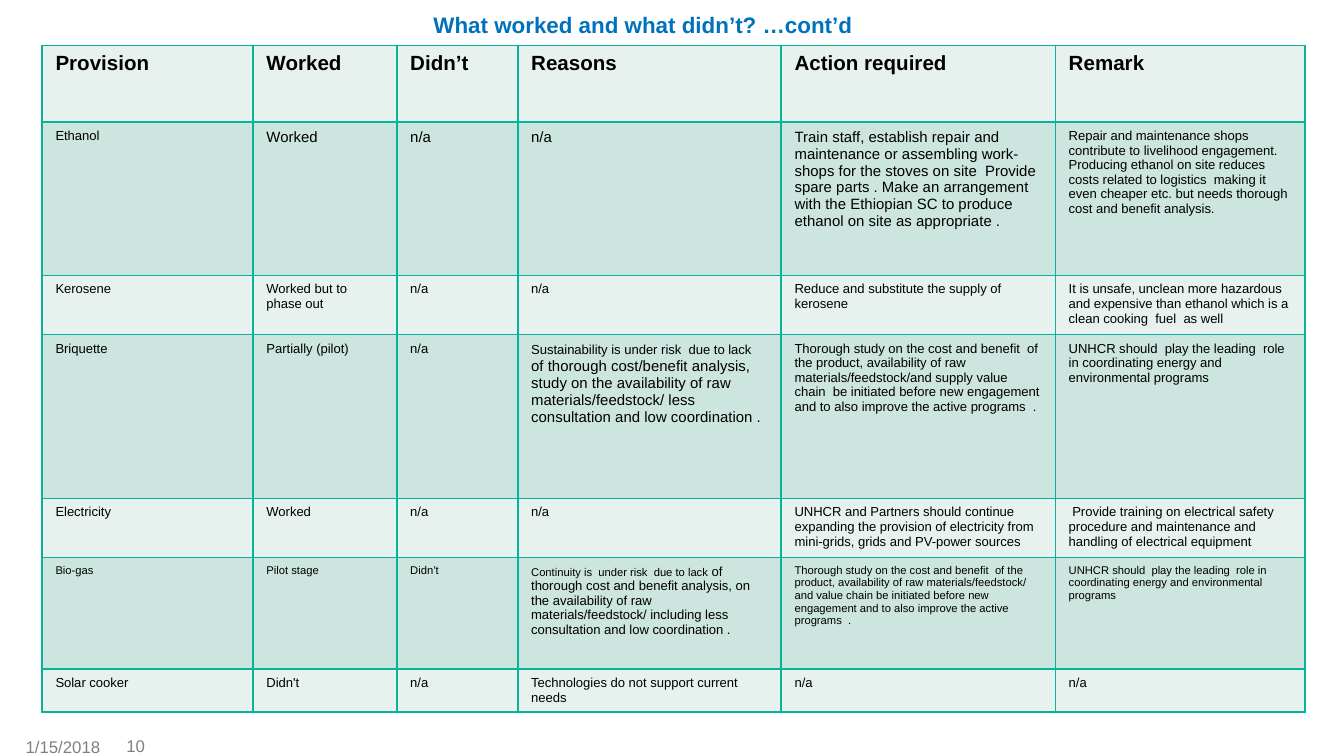
"""Build the slide on which cooking energy provisions worked and which did not."""
from dataclasses import dataclass
from typing import NamedTuple

from lxml.etree import SubElement
from pptx import Presentation
from pptx.dml.color import RGBColor
from pptx.enum.text import MSO_ANCHOR, MSO_AUTO_SIZE, PP_ALIGN
from pptx.oxml.ns import qn
from pptx.util import Inches, Pt


@dataclass(frozen=True)
class Theme:
    font: str = "Arial"
    title: str = "0072BC"
    ink: str = "000000"
    footer: str = "808080"
    border: str = "08B499"
    light: str = "E7F2EF"
    dark: str = "CCE5DE"
    title_size: int = 12
    header_size: int = 11
    footer_size: int = 9
    large: int = 8
    body: int = 7
    small: int = 6


class Area(NamedTuple):
    left: float
    top: float
    width: float
    height: float


class Run(NamedTuple):
    text: str
    size: int


class Footer(NamedTuple):
    text: str
    area: Area


THEME = Theme()
SLIDE_WIDTH = Inches(10)
SLIDE_HEIGHT = SLIDE_WIDTH * 9 // 16
TITLE_AREA = Area(0, 0.95, 95.7, 4.1)
TABLE_AREA = Area(3.13, 6.02, 94, 88.2)
COLUMN_WEIGHTS = (1.57, 1.07, 0.9, 1.96, 2.04, 1.86)
ROW_WEIGHTS = (0.57, 1.14, 0.44, 1.22, 0.44, 0.83, 0.32)
FOOTERS = (
    Footer("1/15/2018", Area(1.9, 97.5, 7.1, 3)),
    Footer("10", Area(9.4, 97.3, 5, 3)),
)


def cells(size: int, *contents) -> list:
    """Turn plain strings into single runs of one size and keep lists of runs."""
    return [[Run(item, size)] if isinstance(item, str) else item for item in contents]


LEADING_ROLE = ("UNHCR should  play the leading  role in coordinating energy "
                "and environmental programs")
ROWS = (
    cells(THEME.header_size, "Provision", "Worked", "Didn’t", "Reasons",
          "Action required", "Remark"),
    cells(THEME.large, [Run("Ethanol", THEME.body)], "Worked", "n/a", "n/a",
          "Train staff, establish repair and maintenance or assembling work-shops for the "
          "stoves on site  Provide spare parts . Make an arrangement with the Ethiopian SC "
          "to produce ethanol on site as appropriate .",
          [Run("Repair and maintenance shops contribute to livelihood engagement. Producing "
               "ethanol on site reduces costs related to logistics  making it even cheaper "
               "etc. but needs thorough cost and benefit analysis.", THEME.body)]),
    cells(THEME.body, "Kerosene", "Worked but to phase out", "n/a", "n/a",
          "Reduce and substitute the supply of kerosene",
          "It is unsafe, unclean more hazardous and expensive than ethanol which is a clean "
          "cooking  fuel  as well"),
    cells(THEME.body, "Briquette", "Partially (pilot)", "n/a",
          [Run("Sustainability is under risk  due to lack", THEME.body),
           Run(" of thorough cost/benefit analysis, study on the availability of raw "
               "materials/feedstock/ less consultation and low coordination .", THEME.large)],
          "Thorough study on the cost and benefit  of the product, availability of raw "
          "materials/feedstock/and supply value chain  be initiated before new engagement "
          "and to also improve the active programs  .",
          LEADING_ROLE),
    cells(THEME.body, "Electricity", "Worked", "n/a", "n/a",
          "UNHCR and Partners should continue expanding the provision of electricity from "
          "mini-grids, grids and PV-power sources",
          " Provide training on electrical safety procedure and maintenance and handling of "
          "electrical equipment"),
    cells(THEME.small, "Bio-gas", "Pilot stage", "Didn’t",
          [Run("Continuity is  under risk  due to lack", THEME.small),
           Run(" of thorough cost and benefit analysis, on the availability of raw "
               "materials/feedstock/ including less consultation and low coordination .",
               THEME.body)],
          "Thorough study on the cost and benefit  of the product, availability of raw "
          "materials/feedstock/ and value chain be initiated before new engagement and to "
          "also improve the active programs  .",
          LEADING_ROLE),
    cells(THEME.body, "Solar cooker", "Didn't", "n/a",
          "Technologies do not support current needs", "n/a", "n/a"),
)


def place(area: Area) -> tuple[int, int, int, int]:
    """Turn percentages of the slide into lengths."""
    return (int(area.left * SLIDE_WIDTH / 100), int(area.top * SLIDE_HEIGHT / 100),
            int(area.width * SLIDE_WIDTH / 100), int(area.height * SLIDE_HEIGHT / 100))


def add_run(para, run: Run, color: str, bold: bool = False) -> None:
    """Add one formatted run to a paragraph."""
    span = para.add_run()
    span.text = run.text
    span.font.name = THEME.font
    span.font.size = Pt(run.size)
    span.font.bold = bold
    span.font.color.rgb = RGBColor.from_string(color)


def clear_insets(frame) -> None:
    """Remove the inner margins of a text frame."""
    frame.margin_left = frame.margin_top = frame.margin_right = frame.margin_bottom = 0


def draw_title(page) -> None:
    """Move and fill the title placeholder."""
    title = page.shapes.title
    title.left, title.top, title.width, title.height = place(TITLE_AREA)
    frame = title.text_frame
    clear_insets(frame)
    frame.auto_size = MSO_AUTO_SIZE.NONE
    frame.vertical_anchor = MSO_ANCHOR.BOTTOM
    para = frame.paragraphs[0]
    para.alignment = PP_ALIGN.CENTER
    para.line_spacing = 0.9
    add_run(para, Run("What worked and what didn’t? …cont’d", THEME.title_size),
            THEME.title, bold=True)


def draw_borders(cell) -> None:
    """Outline all four sides of a cell."""
    properties = cell._tc.get_or_add_tcPr()
    for side in ("a:lnL", "a:lnR", "a:lnT", "a:lnB"):
        line = SubElement(properties, qn(side), w=str(Pt(1)))
        fill = SubElement(line, qn("a:solidFill"))
        SubElement(fill, qn("a:srgbClr"), val=THEME.border)


def draw_table(page) -> None:
    """Draw the provisions table with alternating row fills."""
    left, top, width, height = place(TABLE_AREA)
    table = page.shapes.add_table(len(ROWS), len(COLUMN_WEIGHTS),
                                  left, top, width, height).table
    for column, weight in zip(table.columns, COLUMN_WEIGHTS):
        column.width = int(width * weight / sum(COLUMN_WEIGHTS))
    for row, weight in zip(table.rows, ROW_WEIGHTS):
        row.height = int(height * weight / sum(ROW_WEIGHTS))
    for row_index, contents in enumerate(ROWS):
        for column_index, runs in enumerate(contents):
            cell = table.cell(row_index, column_index)
            draw_borders(cell)
            cell.fill.solid()
            color = THEME.dark if row_index % 2 else THEME.light
            cell.fill.fore_color.rgb = RGBColor.from_string(color)
            for run in runs:
                add_run(cell.text_frame.paragraphs[0], run, THEME.ink, bold=row_index == 0)


def draw_footer(page, footer: Footer) -> None:
    """Draw one small footer text."""
    frame = page.shapes.add_textbox(*place(footer.area)).text_frame
    clear_insets(frame)
    frame.word_wrap = True
    add_run(frame.paragraphs[0], Run(footer.text, THEME.footer_size), THEME.footer)


def main() -> None:
    """Build and save the deck."""
    deck = Presentation()
    deck.slide_width, deck.slide_height = SLIDE_WIDTH, SLIDE_HEIGHT
    page = deck.slides.add_slide(deck.slide_layouts.get_by_name("Title Only"))
    draw_title(page)
    draw_table(page)
    for footer in FOOTERS:
        draw_footer(page, footer)
    deck.save("out.pptx")


if __name__ == "__main__":
    main()
